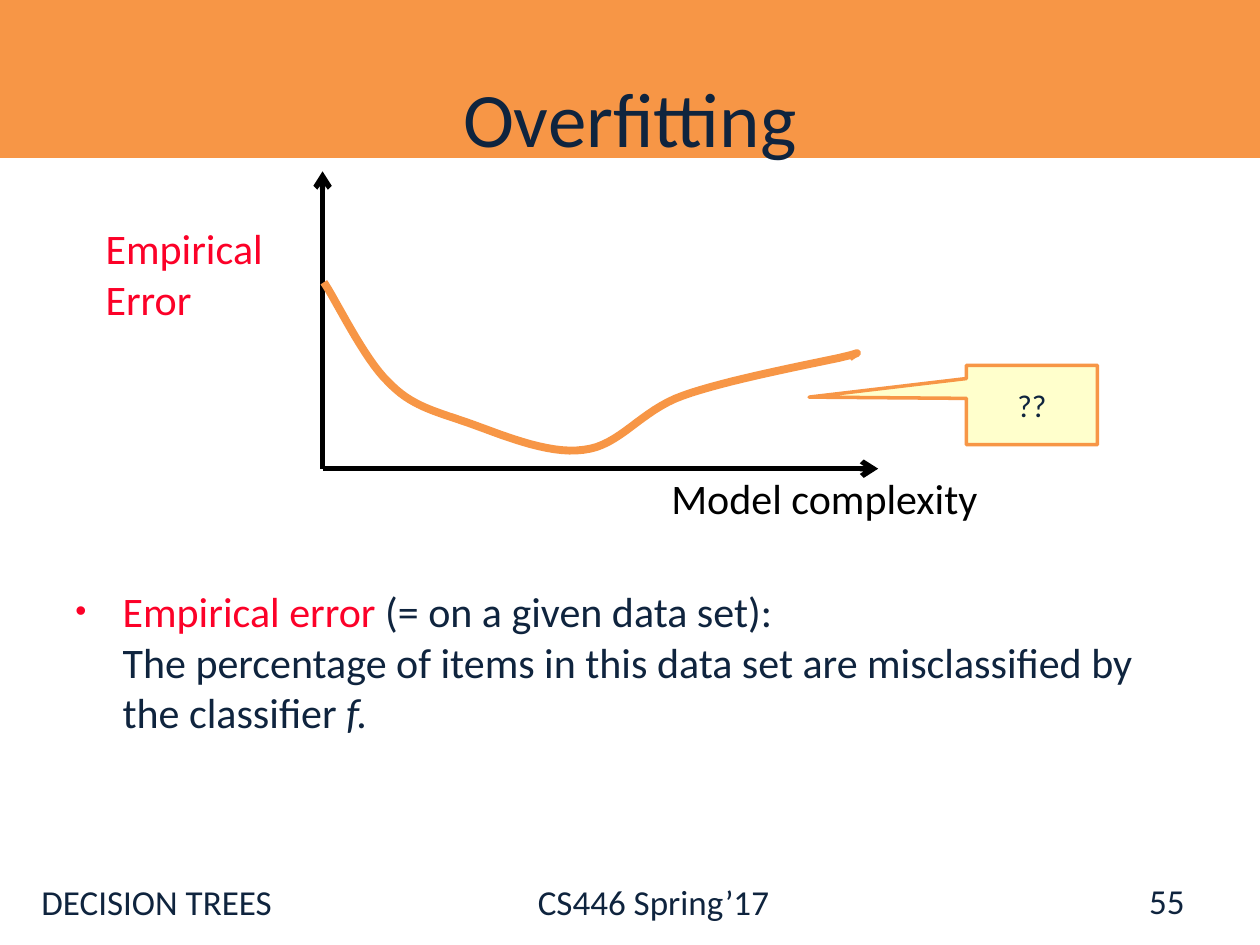
from dataclasses import dataclass

from lxml import etree
from pptx import Presentation
from pptx import util as u
from pptx.dml.color import RGBColor
from pptx.enum import shapes, text
from pptx.oxml.ns import qn

# The slide is a grid of 100 columns by 75 rows with square cells.
COLUMNS, ROWS = 100, 75
CELL = u.Inches(0.1)
FONT = "Calibri"
NAVY, ORANGE, RED, BLACK, CREAM = "0F243E", "F79646", "FC0128", "000000", "FFFFCC"
ALIGN, ANCHOR = text.PP_ALIGN, text.MSO_ANCHOR


@dataclass
class Box:
    x: float
    y: float
    w: float
    h: float

    def inner(self, dx, dy, w, h):
        return Box(self.x + dx, self.y + dy, w, h)

    def point(self, dx, dy):
        return cells(self.x + dx), cells(self.y + dy)

    def emu(self):
        return [cells(n) for n in (self.x, self.y, self.w, self.h)]


def cells(count):
    return u.Emu(round(count * CELL))


def color(value):
    return RGBColor.from_string(value)


def add_xml(parent, tag, **attributes):
    names = {name: str(value) for name, value in attributes.items()}
    return etree.SubElement(parent, qn(tag), names)


def write(shape, runs, size=24, ink=NAVY, align=ALIGN.LEFT, anchor=ANCHOR.TOP):
    """Fill a shape with one paragraph of (words, ink, italic) runs or a string."""
    frame = shape.text_frame
    frame.word_wrap = True
    frame.vertical_anchor = anchor
    paragraph = frame.paragraphs[0]
    paragraph.alignment = align
    if isinstance(runs, str):
        runs = [(runs, ink, False)]
    for words, run_ink, italic in runs:
        for index, line in enumerate(words.split("\n")):
            if index:
                paragraph.add_line_break()
            run = paragraph.add_run()
            run.text = line
            run.font.name, run.font.size = FONT, u.Pt(size)
            run.font.italic = italic
            run.font.color.rgb = color(run_ink)
    return paragraph


def add_text(slide, box, runs, **style):
    return write(slide.shapes.add_textbox(*box.emu()), runs, **style)


def add_block(slide, box, preset, fill, line, width):
    block = slide.shapes.add_shape(preset, *box.emu())
    block.shadow.inherit = False
    block.fill.solid()
    block.fill.fore_color.rgb = color(fill)
    block.line.color.rgb = color(line)
    block.line.width = u.Pt(width)
    return block


def add_arrow(slide, start, end):
    arrow = slide.shapes.add_connector(shapes.MSO_CONNECTOR.STRAIGHT, *start, *end)
    arrow.line.color.rgb = color(BLACK)
    arrow.line.width = u.Pt(3)
    add_xml(arrow.line._get_or_add_ln(), "a:tailEnd", type="arrow")
    add_xml(arrow._element.spPr, "a:effectLst")


def bezier_points(start, curves, steps=16):
    """Sample a chain of cubic curves, each given as two controls and an end."""
    for first, second, end in curves:
        for step in range(1, steps + 1):
            t = step / steps
            s = 1 - t
            weights = s**3, 3 * s * s * t, 3 * s * t * t, t**3
            knots = start, first, second, end
            yield tuple(sum(k * p[axis] for k, p in zip(weights, knots))
                        for axis in (0, 1))
        start = end


def header(slide, box):
    add_block(slide, box, shapes.MSO_SHAPE.RECTANGLE, ORANGE, ORANGE, 0.75)
    add_text(slide, box.inner(5, 3, 90, 12.5), "Overfitting", size=44,
             align=ALIGN.CENTER, anchor=ANCHOR.MIDDLE)


def error_curve(slide, box):
    start = (0.1, 8.8)
    curves = [
        ((1, 10.1), (3.3, 14.9), (5.2, 16.7)),
        ((7, 18.6), (8.8, 19), (11.4, 19.9)),
        ((14, 20.8), (17.8, 22.5), (20.7, 22.1)),
        ((23.6, 21.8), (25.2, 19), (28.6, 17.8)),
        ((31.9, 16.6), (38.7, 15.3), (41, 14.8)),
        ((43.2, 14.3), (42.3, 14.3), (41.8, 14.8)),
    ]
    outline = slide.shapes.build_freeform(*box.point(*start))
    outline.add_line_segments(
        [box.point(*point) for point in bezier_points(start, curves)], close=False)
    curve = outline.convert_to_shape()
    curve.shadow.inherit = False
    curve.fill.background()
    curve.line.color.rgb = color(ORANGE)
    curve.line.width = u.Pt(4.5)


def error_plot(slide, box):
    """Draw axes along the left and bottom of the box, with labels around it."""
    origin = box.point(0, box.h)
    add_arrow(slide, origin, box.point(0, 0))
    add_arrow(slide, origin, box.point(box.w, box.h))
    add_text(slide, box.inner(26.7, box.h - 0.2, 38.6, 5.1), "Model complexity",
             ink=BLACK)
    add_text(slide, box.inner(-18.2, 3.6, 19.4, 9.1), "Empirical\nError", ink=RED)
    error_curve(slide, box)


def definition(slide, box):
    paragraph = add_text(slide, box, [
        ("Empirical error ", RED, False),
        ("(= on a given data set):\nThe percentage of items in this data set "
         "are misclassified by the classifier ", NAVY, False),
        ("f.", NAVY, True),
    ])
    layout = paragraph._p.get_or_add_pPr()
    indent = cells(3.75)
    layout.set("marL", str(indent))
    layout.set("indent", str(-indent))
    add_xml(layout, "a:buSzPct", val=75000)
    add_xml(layout, "a:buFont", typeface="Arial")
    add_xml(layout, "a:buChar", char="•")


def question(slide, box):
    callout = add_block(slide, box, shapes.MSO_SHAPE.RECTANGULAR_CALLOUT,
                        CREAM, ORANGE, 2)
    callout.adjustments[0] = -1.7
    callout.adjustments[1] = -0.1
    write(callout, "??", size=18, align=ALIGN.CENTER, anchor=ANCHOR.MIDDLE)


def footer(slide, box):
    course = add_text(slide, box, "DECISION TREES\tCS446 Spring’17", size=20)
    tabs = add_xml(course._p.get_or_add_pPr(), "a:tabLst")
    add_xml(tabs, "a:tab", pos=cells(39.4), algn="l")
    add_text(slide, box.inner(69.4, 0.1, 23.3, 4), "55", size=20,
             align=ALIGN.RIGHT, anchor=ANCHOR.MIDDLE)


def main():
    deck = Presentation()
    deck.slide_width, deck.slide_height = cells(COLUMNS), cells(ROWS)
    slide = deck.slides.add_slide(deck.slide_layouts[6])
    header(slide, Box(0, 0, COLUMNS, 12.5))
    error_plot(slide, Box(25.6, 13.6, 44.1, 23.6))
    definition(slide, Box(5, 46, 90, 21))
    question(slide, Box(76.7, 29, 10.4, 6.3))
    footer(slide, Box(2.3, 69.4, 96, 5.6))
    deck.save("out.pptx")


if __name__ == "__main__":
    main()
